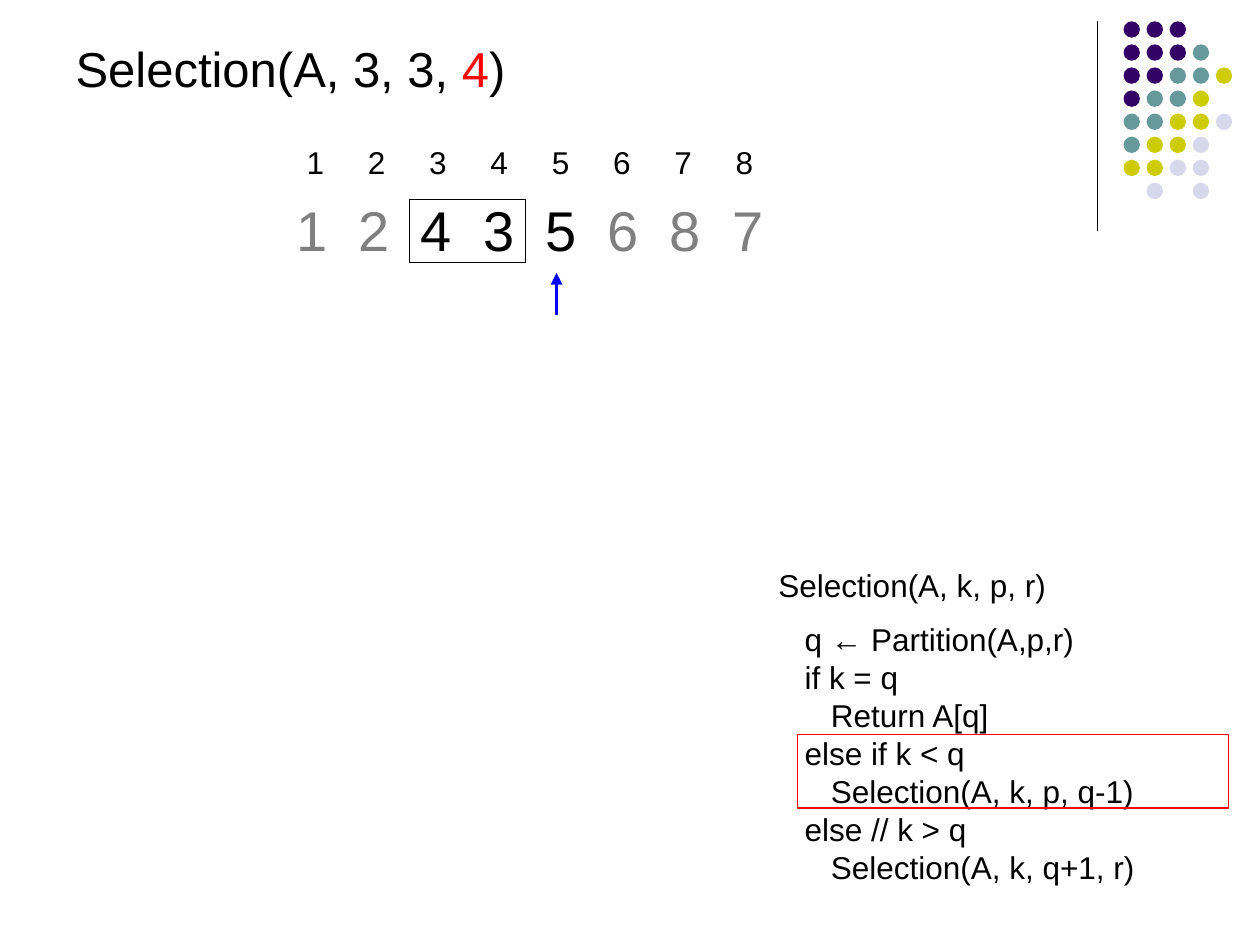
from dataclasses import dataclass

from lxml import etree
from pptx import Presentation
from pptx import util as u
from pptx.dml.color import RGBColor
from pptx.enum import shapes, text
from pptx.oxml import ns

Cm, Pt = u.Cm, u.Pt


@dataclass(frozen=True)
class Theme:
    font: str = "Arial"
    ink: str = "000000"
    dim: str = "808080"
    red: str = "FF0000"
    blue: str = "0000FF"
    dots: tuple = ("330066", "669999", "CCCC00", "D8D8EC")
    head: int = 28
    cell: int = 32
    body: int = 18
    lead: float = 21.7
    thin: float = 0.75
    bold: float = 2.25


T = Theme()
GRID = ("000", "0001", "00112", "0112", "11223", "1223", "2233", " 3 3")
CODE = (
    (0, "Selection(A, k, p, r)"),
    (1, "q ← Partition(A,p,r)"),
    (1, "if k = q"),
    (2, "Return A[q]"),
    (1, "else if k < q"),
    (2, "Selection(A, k, p, q-1)"),
    (1, "else // k > q"),
    (2, "Selection(A, k, q+1, r)"),
)


def rgb(tone):
    return RGBColor.from_string(tone)


def style(run, size, tone):
    run.font.name = T.font
    run.font.size = Pt(size)
    run.font.color.rgb = rgb(tone)


def write(para, parts, size):
    for words, tone in parts:
        run = para.add_run()
        run.text = words
        style(run, size, tone)


def label(slide, x, y, w, h):
    frame = slide.shapes.add_textbox(Cm(x), Cm(y), Cm(w), Cm(h)).text_frame
    frame.word_wrap = True
    return frame


def shape(slide, kind, x, y, w, h):
    item = slide.shapes.add_shape(kind, Cm(x), Cm(y), Cm(w), Cm(h))
    item.shadow.inherit = False
    return item


def frame(slide, x, y, w, h, tone):
    box = shape(slide, shapes.MSO_SHAPE.RECTANGLE, x, y, w, h)
    box.fill.background()
    box.line.color.rgb = rgb(tone)
    box.line.width = Pt(T.thin)


def line(slide, x, y, x2, y2, tone, width):
    rule = slide.shapes.add_connector(
        shapes.MSO_CONNECTOR.STRAIGHT, Cm(x), Cm(y), Cm(x2), Cm(y2))
    rule.line.color.rgb = rgb(tone)
    rule.line.width = Pt(width)
    etree.SubElement(rule._element.spPr, ns.qn("a:effectLst"))
    return rule


def tabs(para, step, count):
    stops = etree.SubElement(para._p.get_or_add_pPr(), ns.qn("a:tabLst"))
    for i in range(1, count):
        etree.SubElement(stops, ns.qn("a:tab"), pos=str(Cm(step * i)), algn="l")


def decor(slide, x, y, h):
    line(slide, x, y, x, y + h, T.ink, T.thin)
    step, size = 0.465, 0.33
    for r, row in enumerate(GRID):
        for c, key in enumerate(row):
            if key != " ":
                dot = shape(slide, shapes.MSO_SHAPE.OVAL,
                            x + 0.53 + c * step, y + r * step, size, size)
                dot.fill.solid()
                dot.fill.fore_color.rgb = rgb(T.dots[int(key)])
                dot.line.fill.background()


def title(slide, x, y, w, h):
    head = slide.shapes.title
    head.left, head.top, head.width, head.height = Cm(x), Cm(y), Cm(w), Cm(h)
    body = head.text_frame
    body.auto_size = text.MSO_AUTO_SIZE.NONE
    body.vertical_anchor = text.MSO_ANCHOR.TOP
    para = body.paragraphs[0]
    para.alignment = text.PP_ALIGN.LEFT
    write(para, (("Selection(A, 3, 3, ", T.ink), ("4", T.red), (")", T.ink)), T.head)


def array(slide, x, y, w):
    marks = label(slide, x + 0.21, y, w - 1, 1.02).paragraphs[0]
    write(marks, [("\t".join("12345678"), T.ink)], T.body)
    tabs(marks, 1.236, 8)

    cells = label(slide, x, y + 1.06, w, 1.6).paragraphs[0]
    write(cells, (("1\t2", T.dim), ("\t4\t3\t5\t", T.ink), ("6\t8\t7", T.dim)), T.cell)
    tabs(cells, 1.256, 8)

    frame(slide, x + 2.54, y + 1.27, 2.33, 1.27, T.ink)
    arrow = line(slide, x + 5.5, y + 3.6, x + 5.5, y + 2.75, T.blue, T.bold)
    etree.SubElement(arrow.line._get_or_add_ln(), ns.qn("a:tailEnd"), type="triangle")


def code(slide, x, y, w, h):
    body = label(slide, x, y, w, h)
    body.text = "\n".join(words for _, words in CODE)
    for i, (para, (level, _)) in enumerate(zip(body.paragraphs, CODE)):
        para.line_spacing = Pt(T.lead)
        para.space_before = Pt(9 if i == 1 else 0)
        para._p.get_or_add_pPr().set("marL", str(Cm(0.53 * level)))
        style(para.runs[0], T.body, T.ink)
    frame(slide, x + 0.64, y + 3.53, w - 0.84, 1.48, T.red)


def main():
    deck = Presentation()
    deck.slide_width, deck.slide_height = Cm(25.4), Cm(19.05)
    slide = deck.slides.add_slide(deck.slide_layouts[5])
    decor(slide, 22.12, 0.43, 4.22)
    title(slide, 1.27, 0.64, 16.3, 1.45)
    array(slide, 5.72, 2.75, 11.63)
    code(slide, 15.44, 11.28, 9.53, 6.81)
    deck.save("out.pptx")


if __name__ == "__main__":
    main()
